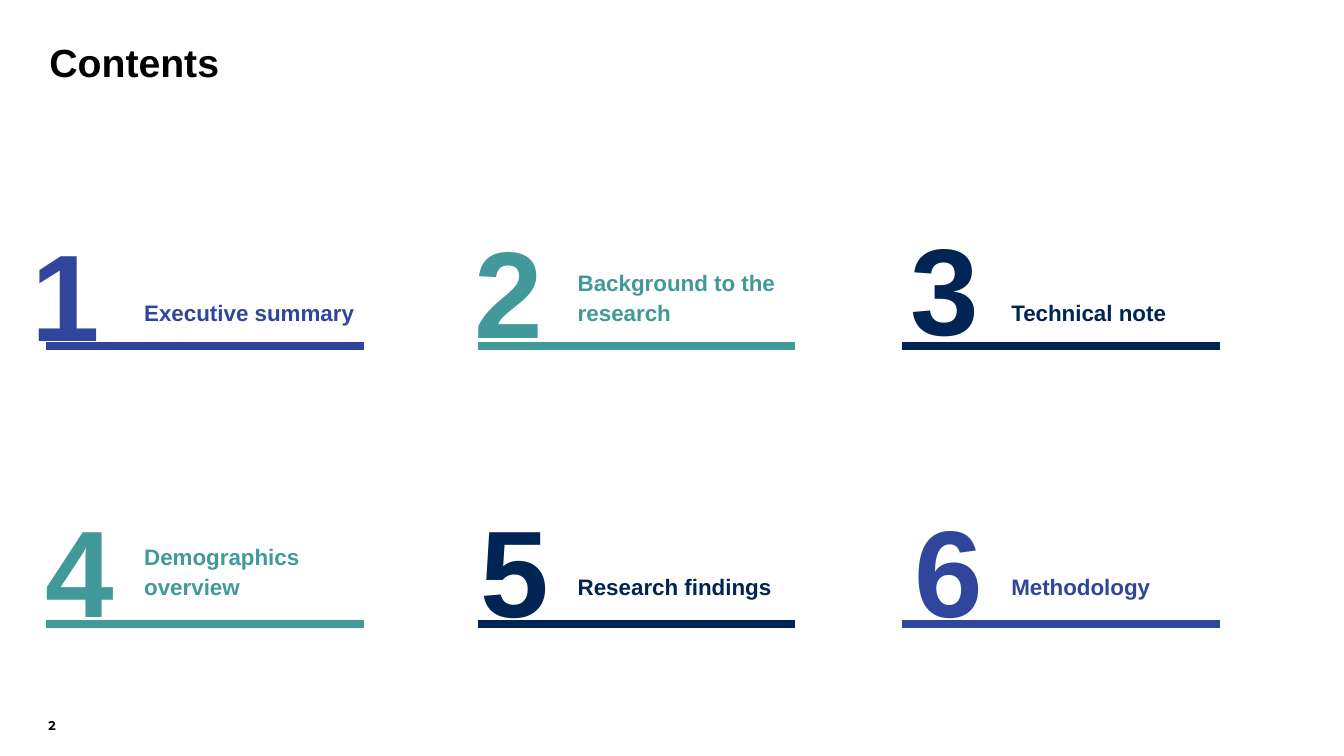
from dataclasses import dataclass

from lxml import etree
from pptx import Presentation
from pptx import util as u
from pptx.dml.color import RGBColor
from pptx.enum import shapes, text
from pptx.oxml import ns


@dataclass(frozen=True)
class Theme:
    font: str = "Arial"
    page_font: str = "Montserrat"
    black: str = "000000"
    blue: str = "2F469C"
    teal: str = "419999"
    navy: str = "002554"
    title_size: float = 28
    number_size: float = 88
    label_size: float = 16
    page_size: float = 9
    rule_width: float = 6


@dataclass(frozen=True)
class Chapter:
    title: str
    color: str
    number_left: float
    number_top: float
    lines: int = 1


@dataclass(frozen=True)
class Row:
    label_bottom: float
    rule_top: float


THEME = Theme()
COLUMN_PITCH = 4.3
LABEL_LEFT, LABEL_WIDTH = 1.43, 2.21
LABEL_HEIGHT, EXTRA_LINE = 0.27, 0.3
NUMBER_WIDTH, NUMBER_HEIGHT = 0.69, 1.5
RULE_LEFTS = (0.46, 4.74, 8.95)
RULE_LENGTH = 3.15
ROWS = (Row(3.23, 3.43), Row(5.95, 6.19))
CHAPTERS = (
    Chapter("Executive summary", THEME.blue, 0.31, 2.02),
    Chapter("Background to the research", THEME.teal, 4.71, 1.99, lines=2),
    Chapter("Technical note", THEME.navy, 9.03, 1.96),
    Chapter("Demographics overview", THEME.teal, 0.45, 4.76, lines=2),
    Chapter("Research findings", THEME.navy, 4.77, 4.76),
    Chapter("Methodology", THEME.blue, 9.07, 4.76),
)


def write(box, words: str, *, size: float, color: str, font: str = THEME.font,
          anchor=text.MSO_ANCHOR.TOP, wrap: bool = True, grow: bool = False,
          line_spacing: float | None = None, space_after: float = 0) -> None:
    """Fill a box with one bold, left-aligned paragraph and no insets."""
    frame = box.text_frame
    frame.margin_left = frame.margin_right = frame.margin_top = frame.margin_bottom = 0
    frame.vertical_anchor = anchor
    frame.word_wrap = wrap
    frame.auto_size = text.MSO_AUTO_SIZE.SHAPE_TO_FIT_TEXT if grow else text.MSO_AUTO_SIZE.NONE
    para = frame.paragraphs[0]
    para.alignment = text.PP_ALIGN.LEFT
    para.line_spacing = line_spacing
    para.space_before, para.space_after = u.Pt(0), u.Pt(space_after)
    span = para.add_run()
    span.text = words
    span.font.name, span.font.size, span.font.bold = font, u.Pt(size), True
    span.font.color.rgb = RGBColor.from_string(color)


def add_box(page, left: float, top: float, width: float, height: float):
    return page.shapes.add_textbox(u.Inches(left), u.Inches(top), u.Inches(width), u.Inches(height))


def add_rule(page, left: float, top: float, color: str) -> None:
    rule = page.shapes.add_connector(
        shapes.MSO_CONNECTOR.STRAIGHT,
        u.Inches(left), u.Inches(top), u.Inches(left + RULE_LENGTH), u.Inches(top))
    rule.line.width = u.Pt(THEME.rule_width)
    rule.line.color.rgb = RGBColor.from_string(color)
    etree.SubElement(rule.element.spPr, ns.qn("a:effectLst"))


def add_chapter(page, index: int, chapter: Chapter) -> None:
    row_index, column = divmod(index, len(RULE_LEFTS))
    row = ROWS[row_index]
    number = add_box(page, chapter.number_left, chapter.number_top, NUMBER_WIDTH, NUMBER_HEIGHT)
    write(number, str(index + 1), size=THEME.number_size, color=chapter.color,
          wrap=False, grow=True, line_spacing=1.1, space_after=4)
    height = LABEL_HEIGHT + EXTRA_LINE * (chapter.lines - 1)
    label = add_box(page, LABEL_LEFT + column * COLUMN_PITCH, row.label_bottom - height,
                    LABEL_WIDTH, height)
    write(label, chapter.title, size=THEME.label_size, color=chapter.color,
          anchor=text.MSO_ANCHOR.BOTTOM, grow=True, line_spacing=1.1, space_after=4)
    add_rule(page, RULE_LEFTS[column], row.rule_top, chapter.color)


def main() -> None:
    deck = Presentation()
    deck.slide_width, deck.slide_height = u.Inches(13.33), u.Inches(7.5)
    page = deck.slides.add_slide(deck.slide_layouts.get_by_name("Title Only"))
    title = page.shapes.title
    title.left, title.top = u.Inches(0.49), u.Inches(0.43)
    title.width, title.height = u.Inches(10.22), u.Inches(0.85)
    write(title, "Contents", size=THEME.title_size, color=THEME.black, line_spacing=0.9)
    for index, chapter in enumerate(CHAPTERS):
        add_chapter(page, index, chapter)
    write(add_box(page, 0.48, 6.87, 0.33, 0.4), "2", size=THEME.page_size, color=THEME.black,
          font=THEME.page_font, anchor=text.MSO_ANCHOR.BOTTOM, wrap=False)
    deck.save("out.pptx")


if __name__ == "__main__":
    main()
